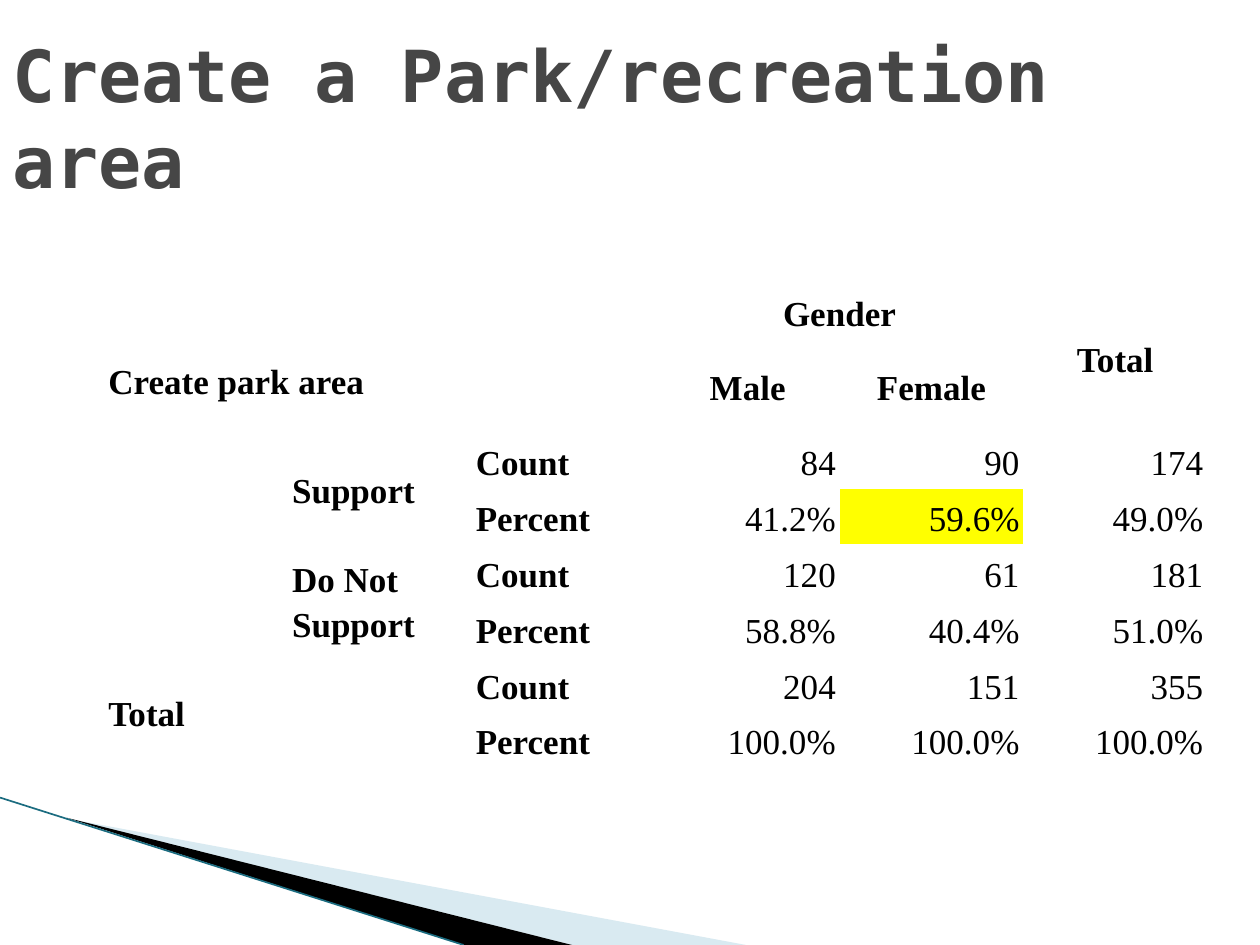
from lxml.etree import SubElement
from pptx import Presentation
from pptx.dml.color import RGBColor as Rgb
from pptx.enum.shapes import MSO_CONNECTOR as Link
from pptx.enum.text import MSO_ANCHOR as Anchor, PP_ALIGN as Align
from pptx.oxml.ns import qn
from pptx.util import Inches, Pt

HUES = {"title": "464646", "ink": "000000", "mark": "FFFF00",
        "pale": "A0CBDC", "edge": "1B6C80"}
SERIF = "Times New Roman"
MONO = "DejaVu Sans Mono"
ROWS = [
    ("Count", "84", "90", "174"),
    ("Percent", "41.2%", "59.6%", "49.0%"),
    ("Count", "120", "61", "181"),
    ("Percent", "58.8%", "40.4%", "51.0%"),
    ("Count", "204", "151", "355"),
    ("Percent", "100.0%", "100.0%", "100.0%"),
]
HEADS = [
    (0, 0, "Create park area", Align.LEFT),
    (0, 3, "Gender", Align.CENTER),
    (0, 5, "Total", Align.CENTER),
    (1, 3, "Male", Align.CENTER),
    (1, 4, "Female", Align.CENTER),
    (2, 1, "Support", Align.LEFT),
    (4, 1, "Do Not Support", Align.LEFT),
    (6, 0, "Total", Align.LEFT),
]
SPANS = [(0, 0, 1, 2), (0, 3, 0, 4), (0, 5, 1, 5), (2, 0, 5, 0),
         (2, 1, 3, 1), (4, 1, 5, 1), (6, 0, 7, 1)]


def color(name):
    """Return the named colour."""
    return Rgb.from_string(HUES[name])


def write(frame, text, font=SERIF, size=20, bold=True, hue="ink",
          align=Align.LEFT, space=1.15):
    """Put formatted text in a frame."""
    para = frame.paragraphs[0]
    para.alignment = align
    para.line_spacing = space
    run = para.add_run()
    run.text = text
    run.font.name = font
    run.font.size = Pt(size)
    run.font.bold = bold
    run.font.color.rgb = color(hue)


def add_title(slide, text):
    """Add the slide title."""
    box = slide.shapes.add_textbox(0, Inches(0.3), Inches(9), Inches(1.25))
    frame = box.text_frame
    frame.word_wrap = True
    frame.vertical_anchor = Anchor.MIDDLE
    write(frame, text, font=MONO, size=41, hue="title", space=1.0)


def add_wedge(slide, points, hue, alpha=None):
    """Add a filled corner wedge."""
    spots = [(Inches(x), Inches(y)) for x, y in points]
    build = slide.shapes.build_freeform(*spots[0])
    build.add_line_segments(spots[1:])
    shape = build.convert_to_shape()
    shape.shadow.inherit = False
    shape.line.fill.background()
    shape.fill.solid()
    shape.fill.fore_color.rgb = color(hue)
    if alpha:
        tint = next(shape.fill._xPr.iter(qn("a:srgbClr")))
        SubElement(tint, qn("a:alpha"), val=str(alpha * 1000))


def add_edge(slide, start, end):
    """Add the thin line along the wedges."""
    ends = [Inches(v) for v in (*start, *end)]
    line = slide.shapes.add_connector(Link.STRAIGHT, *ends)
    line.line.color.rgb = color("edge")
    line.line.width = Pt(0.95)
    SubElement(line._element.spPr, qn("a:effectLst"))


def add_grid(slide):
    """Add the table of support by gender."""
    shape = slide.shapes.add_table(8, 6, Inches(0.83), Inches(2.25),
                                   Inches(8.75), Inches(3.68))
    grid = shape.table
    grid.first_row = grid.horz_banding = False
    for row in grid.rows:
        row.height = Inches(0.42)
    grid.rows[1].height = Inches(0.74)
    for cell in grid.iter_cells():
        cell.fill.background()
        cell.vertical_anchor = Anchor.MIDDLE
        cell.margin_left = cell.margin_right = Inches(0.03)
        cell.margin_top = cell.margin_bottom = Inches(0.03)
    for top, left, low, right in SPANS:
        grid.cell(top, left).merge(grid.cell(low, right))
    for row, col, text, align in HEADS:
        write(grid.cell(row, col).text_frame, text, align=align)
    for row, (label, *values) in enumerate(ROWS, 2):
        write(grid.cell(row, 2).text_frame, label)
        for col, value in enumerate(values, 3):
            write(grid.cell(row, col).text_frame, value, bold=False,
                  align=Align.RIGHT)
    head = grid.cell(0, 0)
    head.margin_top, head.margin_bottom = Inches(0.34), 0
    mark = grid.cell(3, 4)
    mark.fill.solid()
    mark.fill.fore_color.rgb = color("mark")


def main():
    """Build and save the slide."""
    deck = Presentation()
    deck.slide_width, deck.slide_height = Inches(10), Inches(7.5)
    slide = deck.slides.add_slide(deck.slide_layouts[6])
    add_wedge(slide, [(0.55, 6.5), (5.92, 7.5), (4.54, 7.5)], "pale", 40)
    add_wedge(slide, [(0.53, 6.49), (4.54, 7.5), (3.68, 7.5)], "ink")
    add_edge(slide, (0, 6.33), (3.68, 7.5))
    add_title(slide, "Create a Park/recreation area")
    add_grid(slide)
    deck.save("out.pptx")


if __name__ == "__main__":
    main()
